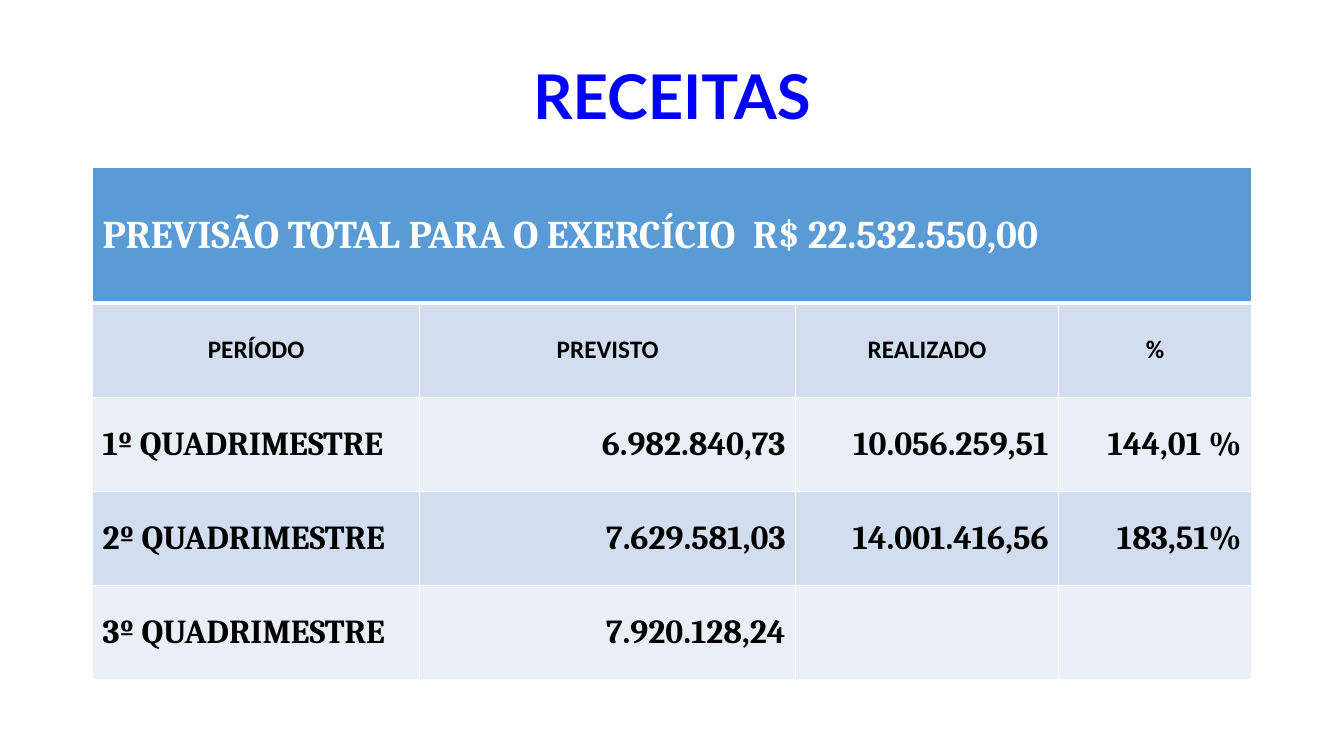
from dataclasses import dataclass

from lxml import etree
from pptx import Presentation
from pptx.dml.color import RGBColor
from pptx.enum.text import MSO_ANCHOR, PP_ALIGN
from pptx.oxml.ns import qn
from pptx.util import Cm, Pt

LEFT, MID, RIGHT = PP_ALIGN.LEFT, PP_ALIGN.CENTER, PP_ALIGN.RIGHT
CENTER = MSO_ANCHOR.MIDDLE

HUES = {
    "title": "0000FF",
    "head": "5B9BD5",
    "dark": "D2DEEF",
    "light": "EAEFF7",
    "white": "FFFFFF",
    "black": "000000",
}
WIDTHS = (8.25, 9.47, 6.63, 4.86)
HEAD, STEP = 3.42, 2.37


@dataclass
class Row:
    texts: tuple
    fill: str
    size: int = 24
    font: str = "Cambria"
    hue: str = "black"
    aligns: tuple = (LEFT, RIGHT, RIGHT, RIGHT)
    rule: int = 1


ROWS = (
    Row(("PREVISÃO TOTAL PARA O EXERCÍCIO  R$ 22.532.550,00", "", "", ""),
        "head", size=28, hue="white", rule=3),
    Row(("PERÍODO", "PREVISTO", "REALIZADO", "%"), "dark",
        size=18, font="Calibri", aligns=(MID,) * 4),
    Row(("1º QUADRIMESTRE", "6.982.840,73", "10.056.259,51", "144,01 %"), "light"),
    Row(("2º QUADRIMESTRE", "7.629.581,03", "14.001.416,56", "183,51%"), "dark"),
    Row(("3º QUADRIMESTRE", "7.920.128,24", "", ""), "light"),
)


def write(frame, text: str, *, size: int, font: str, hue: str,
          align=LEFT, space: float = 1.0) -> None:
    para = frame.paragraphs[0]
    para.alignment = align
    para.line_spacing = space
    run = para.add_run()
    run.text = text
    run.font.size = Pt(size)
    run.font.name = font
    run.font.bold = True
    run.font.color.rgb = RGBColor.from_string(HUES[hue])


def edge(cell, top: int, base: int) -> None:
    """Give a cell white borders, with widths in points."""
    props = cell._tc.get_or_add_tcPr()
    for tag, width in (("lnL", 1), ("lnR", 1), ("lnT", top), ("lnB", base)):
        line = etree.SubElement(props, qn(f"a:{tag}"), w=str(Pt(width)))
        fill = etree.SubElement(line, qn("a:solidFill"))
        etree.SubElement(fill, qn("a:srgbClr"), val=HUES["white"])


def add_grid(slide) -> None:
    high = HEAD + STEP * (len(ROWS) - 1)
    grid = slide.shapes.add_table(len(ROWS), len(WIDTHS), Cm(2.33), Cm(4.22),
                                  Cm(sum(WIDTHS)), Cm(high)).table
    for col, width in zip(grid.columns, WIDTHS):
        col.width = Cm(width)
    top = 1
    for y, row in enumerate(ROWS):
        grid.rows[y].height = Cm(STEP if y else HEAD)
        for x, (text, align) in enumerate(zip(row.texts, row.aligns)):
            cell = grid.cell(y, x)
            edge(cell, top, row.rule)
            cell.fill.solid()
            cell.fill.fore_color.rgb = RGBColor.from_string(HUES[row.fill])
            cell.vertical_anchor = CENTER
            if text:
                write(cell.text_frame, text, size=row.size, font=row.font,
                      hue=row.hue, align=align)
        top = row.rule
    grid.cell(0, 0).merge(grid.cell(0, len(WIDTHS) - 1))


def main() -> None:
    deck = Presentation()
    deck.slide_width, deck.slide_height = Cm(33.87), Cm(19.05)
    slide = deck.slides.add_slide(deck.slide_layouts[5])

    # Title
    title = slide.shapes.title
    title.left, title.top = Cm(2.33), Cm(1.01)
    title.width, title.height = Cm(29.21), Cm(3)
    title.text_frame.vertical_anchor = CENTER
    write(title.text_frame, "RECEITAS", size=44, font="Lato", hue="title",
          align=MID, space=0.9)

    # Revenue table
    add_grid(slide)
    deck.save("out.pptx")


if __name__ == "__main__":
    main()
